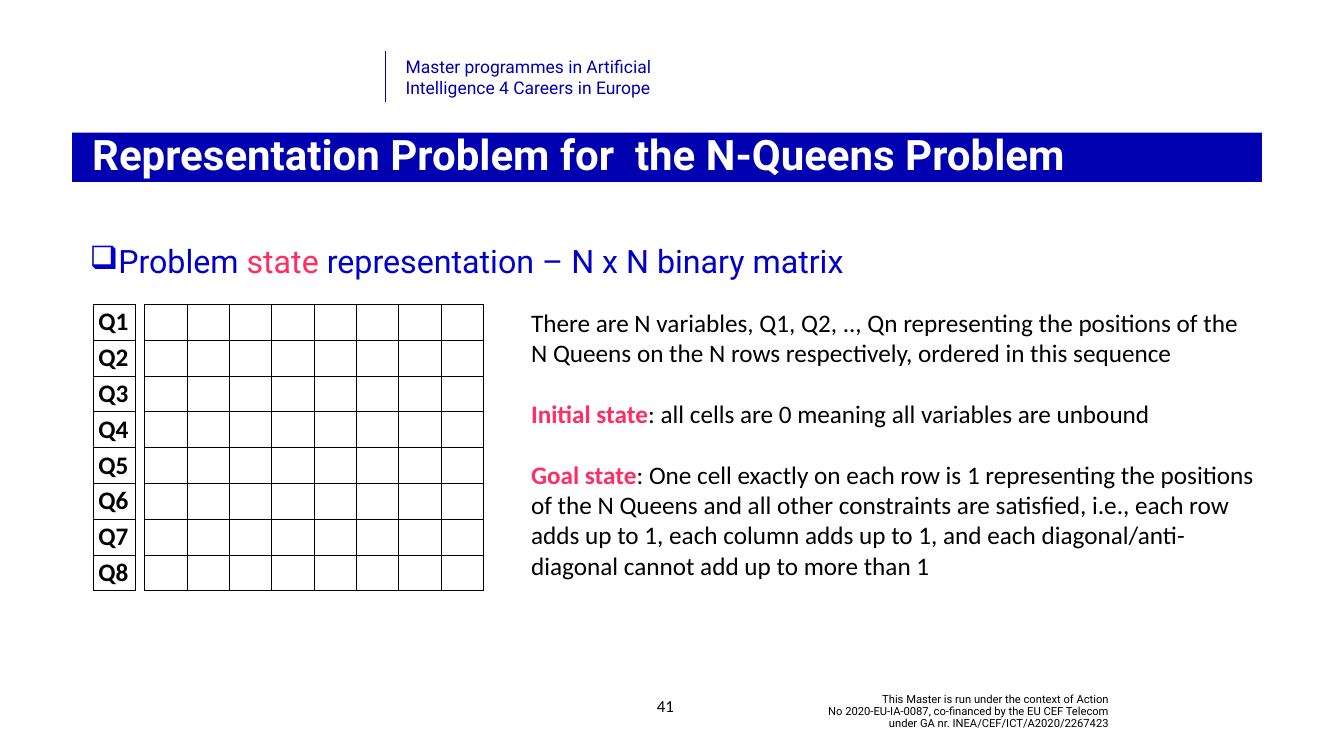
import pptx
import pptx.dml.color
import pptx.enum.shapes
import pptx.enum.text
import pptx.oxml
import pptx.oxml.ns
import pptx.util

Inches, Pt = pptx.util.Inches, pptx.util.Pt
ALIGN = pptx.enum.text.PP_ALIGN
MIDDLE = pptx.enum.text.MSO_ANCHOR.MIDDLE
COLORS = {"navy": "0000B0", "blue": "0100C8", "pink": "FF2D64",
          "black": "000000", "white": "FFFFFF"}
FOOTER = {"font": "Roboto", "size": 16, "color": "black"}
HEADER = {"font": "Roboto", "size": 25, "color": "navy"}
NUMBER = {"font": "Calibri", "size": 24, "color": "black"}
TITLE = {"font": "Roboto", "size": 60, "color": "white", "bold": True}
TOPIC = {"font": "Roboto", "size": 46, "color": "blue"}
BODY = {"font": "Calibri", "size": 36, "color": "black"}
KEY = {**BODY, "color": "pink", "bold": True}
LABEL = {**BODY, "bold": True}


def rgb(name):
    return pptx.dml.color.RGBColor.from_string(COLORS[name])


def apply(obj, values):
    for name, value in values.items():
        setattr(obj, name, value)


def add_xml(parent, xml):
    ns = pptx.oxml.ns.nsdecls("a")
    parent.append(pptx.oxml.parse_xml(xml.replace(">", f" {ns}>", 1)
                                      if "/>" not in xml.split(">")[0] + ">"
                                      else xml.replace("/>", f" {ns}/>", 1)))


class Deck:
    """Holds the slide and draws each kind of element on it."""

    def __init__(self, prs):
        self.s = prs.slides.add_slide(prs.slide_layouts[6])

    def fill_text(self, tf, paragraphs, para=None, frame=None, bullet=None):
        apply(tf, {"word_wrap": True, **(frame or {})})
        for i, runs in enumerate(paragraphs):
            p = tf.paragraphs[0] if i == 0 else tf.add_paragraph()
            if bullet:
                pPr = p._p.get_or_add_pPr()
                apply(pPr, {})
                pPr.set("marL", str(Inches(0.5)))
                pPr.set("indent", str(Inches(-0.5)))
                add_xml(pPr, f'<a:buChar char="{bullet}"/>')
            apply(p, para or {})
            if i:
                p.space_before = Pt(44)
            for text, style in runs:
                self.add_run(p, text, style)

    def add_run(self, p, text, style):
        for i, line in enumerate(text.split("\n")):
            if i:
                p.add_line_break()
            r = p.add_run()
            r.text = line
            apply(r.font, {"name": style["font"], "size": Pt(style["size"]),
                           "bold": style.get("bold", False)})
            r.font.color.rgb = rgb(style["color"])

    def text(self, box, paragraphs, **options):
        sp = self.s.shapes.add_textbox(*map(Inches, box))
        self.fill_text(sp.text_frame, paragraphs, **options)

    def banner(self, box, color, paragraphs, **options):
        sp = self.s.shapes.add_shape(
            pptx.enum.shapes.MSO_SHAPE.RECTANGLE, *map(Inches, box))
        sp.shadow.inherit = False
        sp.fill.solid()
        sp.fill.fore_color.rgb = rgb(color)
        sp.line.fill.background()
        self.fill_text(sp.text_frame, paragraphs, **options)

    def line(self, ends, color, width):
        cx = self.s.shapes.add_connector(
            pptx.enum.shapes.MSO_CONNECTOR.STRAIGHT, *map(Inches, ends))
        cx.line.color.rgb = rgb(color)
        cx.line.width = Pt(width)
        add_xml(cx._element.spPr, "<a:effectLst/>")

    def grid(self, left, top, col_width, row_height, rows):
        n, m = len(rows), len(rows[0])
        table = self.s.shapes.add_table(
            n, m, *map(Inches, (left, top, col_width * m, row_height * n))).table
        apply(table, {"first_row": False, "horz_banding": False})
        for col in table.columns:
            col.width = Inches(col_width)
        for row, texts in zip(table.rows, rows):
            row.height = Inches(row_height)
            for cell, text in zip(row.cells, texts):
                self.border(cell)
                if text:
                    self.add_run(cell.text_frame.paragraphs[0], text, LABEL)

    def border(self, cell):
        tcPr = cell._tc.get_or_add_tcPr()
        for side in "LRTB":
            add_xml(tcPr, f'<a:ln{side} w="{Pt(1)}"><a:solidFill>'
                    f'<a:srgbClr val="{COLORS["black"]}"/></a:solidFill></a:ln{side}>')
        cell.fill.background()


def main():
    prs = pptx.Presentation()
    apply(prs, {"slide_width": Inches(26.67), "slide_height": Inches(15)})
    deck = Deck(prs)
    deck.text((15.02, 13.74, 7.08, 0.76), [[(
        "This Master is run under the context of Action\n"
        "No 2020-EU-IA-0087, co-financed by the EU CEF Telecom\n"
        "under GA nr. INEA/CEF/ICT/A2020/2267423", FOOTER)]],
        para={"alignment": ALIGN.RIGHT, "line_spacing": 0.9},
        frame={"vertical_anchor": MIDDLE})
    deck.line((7.65, 1.01, 7.65, 2.03), "navy", 0.5)
    deck.text((7.95, 1.06, 6.37, 0.94), [[(
        "Master programmes in Artificial\nIntelligence 4 Careers in Europe", HEADER)]])
    deck.text((12.65, 13.61, 1.11, 0.8), [[("41", NUMBER)]],
              para={"alignment": ALIGN.CENTER}, frame={"vertical_anchor": MIDDLE})
    deck.banner((1.43, 2.63, 23.61, 0.98), "navy",
                [[("Representation Problem for  the N-Queens Problem", TITLE)]],
                para={"alignment": ALIGN.LEFT, "line_spacing": 0.9},
                frame={"vertical_anchor": MIDDLE, "margin_left": Inches(0.4)})
    deck.text((1.68, 4.83, 23.86, 0.9), [[
        ("Problem ", TOPIC), ("state ", {**TOPIC, "color": "pink"}),
        ("representation – N x N binary matrix", TOPIC)]],
        para={"line_spacing": 0.9}, bullet="❑")
    deck.grid(2.87, 6.04, 0.84, 0.71, [[""] * 8] * 8)
    deck.text((10.44, 6.04, 14.55, 5.55), [
        [("There are N variables, Q1, Q2, .., Qn representing the positions of the "
          "N Queens on the N rows respectively, ordered in this sequence", BODY)],
        [("Initial state", KEY),
         (": all cells are 0 meaning all variables are unbound", BODY)],
        [("Goal state", KEY),
         (": One cell exactly on each row is 1 representing the positions of the "
          "N Queens and all other constraints are satisfied, i.e., each row adds up "
          "to 1, each column adds up to 1, and each diagonal/anti-diagonal cannot "
          "add up to more than 1", BODY)]])
    deck.grid(1.85, 6.04, 0.83, 0.71, [[f"Q{i}"] for i in range(1, 9)])
    prs.save("out.pptx")


if __name__ == "__main__":
    main()
